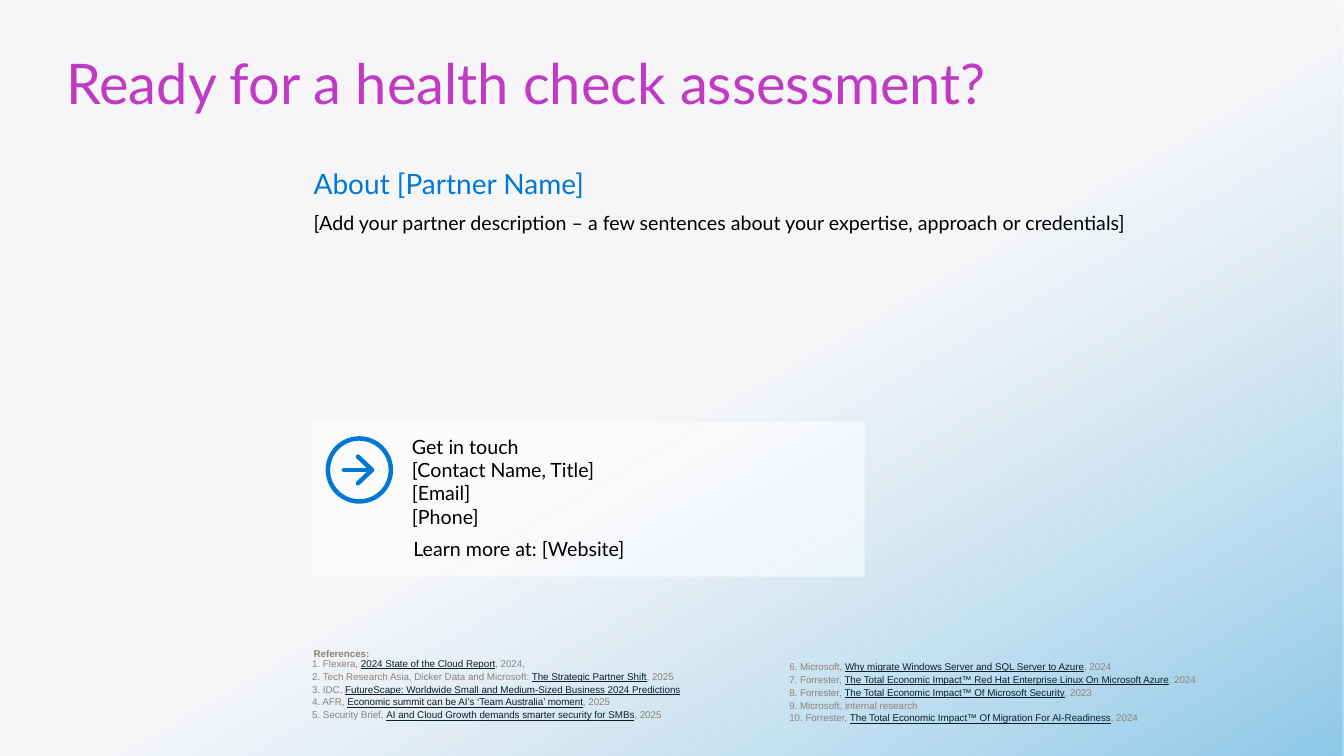
import pptx
import pptx.util
import pptx.dml.color
import pptx.enum.shapes
import pptx.enum.text
import pptx.oxml.ns
import lxml.etree

Pt = pptx.util.Pt
Kind = pptx.enum.shapes.MSO_SHAPE
Align = pptx.enum.text.PP_ALIGN
Size = pptx.enum.text.MSO_AUTO_SIZE
Anchor = pptx.enum.text.MSO_ANCHOR
qn = pptx.oxml.ns.qn

COLORS = {
    "blue": "0078D4", "sky": "8DC8E8", "mist": "F4F3F5", "white": "FFFFFF",
    "pink": "C03BC4", "black": "000000", "grey": "8C8279", "navy": "091F2C",
}

# Text formats
TITLE = {"name": "Lato", "size": Pt(40), "color": "pink"}
HEAD = {"name": "Lato", "size": Pt(20), "color": "blue"}
BODY = {"name": "Lato", "size": Pt(14), "color": "black"}
NOTE = {"name": "Arial", "size": Pt(7), "color": "grey"}
LABEL = {**NOTE, "bold": True}
LINK = {**NOTE, "color": "navy", "underline": True}

# Paragraph formats
TIGHT = {"line_spacing": 0.85}
ITEM = {"line_spacing": 0.85, "space_after": Pt(2)}
FIRST = {"line_spacing": Pt(10.6)}
NEXT = {**FIRST, "space_before": Pt(6)}

# References: source, linked title, ending
LEFT = [
    ("Flexera, ", "2024 State of the Cloud Report", ", 2024,"),
    ("Tech Research Asia, Dicker Data and Microsoft: ",
     "The Strategic Partner Shift", ", 2025"),
    ("IDC, ", "FutureScape: Worldwide Small and Medium-Sized Business "
     "2024 Predictions", ""),
    ("AFR, ", "Economic summit can be AI’s ‘Team Australia’ moment", ", 2025"),
    ("Security Brief, ",
     "AI and Cloud Growth demands smarter security for SMBs", ", 2025"),
]
RIGHT = [
    ("Microsoft, ", "Why migrate Windows Server and SQL Server to Azure",
     ", 2024"),
    ("Forrester, ", "The Total Economic Impact™ Red Hat Enterprise Linux "
     "On Microsoft Azure", ", 2024"),
    ("Forrester, ", "The Total Economic Impact™ Of Microsoft Security",
     ", 2023"),
    ("Microsoft, internal research", "", ""),
    ("Forrester, ", "The Total Economic Impact™ Of Migration For AI-Readiness",
     ", 2024"),
]


def rgb(name):
    return pptx.dml.color.RGBColor.from_string(COLORS[name])


def style(font, form):
    for key, value in form.items():
        if key == "color":
            font.color.rgb = rgb(value)
        else:
            setattr(font, key, value)


def fade(node, share):
    """Set the opacity, in percent, of the colour inside a fill node."""
    color = node.find(".//" + qn("a:srgbClr"))
    alpha = lxml.etree.SubElement(color, qn("a:alpha"))
    alpha.set("val", str(share * 1000))


def write(shape, paras, pad=(0, 0, 0, 0)):
    """Fill a frame with (paragraph format, indent, runs) entries."""
    frame = shape.text_frame
    frame.word_wrap = True
    frame.auto_size = Size.NONE
    frame.vertical_anchor = Anchor.TOP
    for side, gap in zip(("left", "top", "right", "bottom"), pad):
        setattr(frame, "margin_" + side, Pt(gap))
    for i, (form, indent, runs) in enumerate(paras):
        para = frame.add_paragraph() if i else frame.paragraphs[0]
        para.alignment = Align.LEFT
        if indent:
            para._p.get_or_add_pPr().set("marL", str(Pt(indent)))
        for key, value in form.items():
            setattr(para, key, value)
        for text, font in runs:
            run = para.add_run()
            run.text = text
            style(run.font, font)


def add_text(slide, at, paras, pad=(0, 0, 0, 0)):
    box = slide.shapes.add_textbox(*map(Pt, at))
    write(box, paras, pad)


def add_shape(slide, kind, at):
    shape = slide.shapes.add_shape(kind, *map(Pt, at))
    shape.shadow.inherit = False
    shape.line.fill.background()
    return shape


def add_back(slide, wide, high):
    back = add_shape(slide, Kind.RECTANGLE, (0, 0, wide, high))
    back.fill.gradient()
    back.fill.gradient_angle = 300
    stops = back.fill.gradient_stops
    for stop, place, name in zip(stops, (0.51, 1), ("mist", "sky")):
        stop.position = place
        stop.color.rgb = rgb(name)
    fade(back._element.spPr, 68)
    slide.shapes._spTree.insert(2, back._element)


def add_panel(slide, at):
    panel = add_shape(slide, Kind.RECTANGLE, at)
    panel.fill.solid()
    panel.fill.fore_color.rgb = rgb("white")
    fade(panel._element.spPr, 56)


def stroke(shape):
    shape.line.color.rgb = rgb("blue")
    shape.line.width = Pt(3.2)
    shape.line._get_or_add_ln().set("cap", "rnd")


def add_icon(slide, x, y, size):
    """Draw a ringed arrow centred on x, y."""
    ring = add_shape(slide, Kind.OVAL,
                     (x - size / 2, y - size / 2, size, size))
    pen = slide.shapes.build_freeform(Pt(x - 1), Pt(y - 9.5))
    pen.add_line_segments([(Pt(x + 9), Pt(y)), (Pt(x - 1), Pt(y + 9.5))],
                          close=False)
    tip = pen.convert_to_shape()
    tip.shadow.inherit = False
    shaft = slide.shapes.add_connector(
        pptx.enum.shapes.MSO_CONNECTOR.STRAIGHT,
        Pt(x - 11), Pt(y), Pt(x + 9), Pt(y))
    lxml.etree.SubElement(shaft._element.spPr, qn("a:effectLst"))
    for part in (ring, tip):
        part.fill.background()
    for part in (ring, tip, shaft):
        stroke(part)


def cite(items, start):
    paras = []
    for n, (source, name, end) in enumerate(items, start):
        runs = [(f"{n}. {source}", NOTE), (name, LINK), (end, NOTE)]
        paras.append((ITEM, 0, [run for run in runs if run[0]]))
    return paras


def main():
    deck = pptx.Presentation()
    deck.slide_width, deck.slide_height = Pt(960), Pt(540)
    slide = deck.slides.add_slide(deck.slide_layouts[5])
    add_back(slide, 960, 540)

    # Title
    title = slide.shapes.title
    at = (46.3, 41.8, 712.8, 41)
    for key, value in zip(("left", "top", "width", "height"), at):
        setattr(title, key, Pt(value))
    write(title, [(TIGHT, 1, [("Ready for a health check assessment?", TITLE)])])

    # Partner description
    add_text(slide, (223, 118.8, 584.6, 139.7), [
        ({}, 1, [("About [Partner Name]", HEAD)]),
        ({"space_before": Pt(7.5)}, 1, [(
            "[Add your partner description – a few sentences about your "
            "expertise, approach or credentials]", BODY)]),
    ])

    # References
    add_text(slide, (223, 463, 314, 52.6),
             [(TIGHT, 1, [("References:", LABEL)])] + cite(LEFT, 1),
             (0, 1, 0, 0))
    add_text(slide, (563.8, 472.3, 336.2, 45.4), cite(RIGHT, 6), (0, 1, 0, 0))

    # Contact panel
    add_panel(slide, (223, 301, 394.6, 110.9))
    add_icon(slide, 256.7, 335.7, 45)
    lines = ["Get in touch", "[Contact Name, Title]", "[Email]", "[Phone]"]
    paras = [(NEXT if i else FIRST, 0, [(line, BODY)])
             for i, line in enumerate(lines)]
    paras.append(({"space_before": Pt(6)}, 1,
                  [("Learn more at: [Website]", BODY)]))
    add_text(slide, (287.2, 309.6, 302.4, 97.9), paras, (7.2,) * 4)

    deck.save("out.pptx")


if __name__ == "__main__":
    main()
